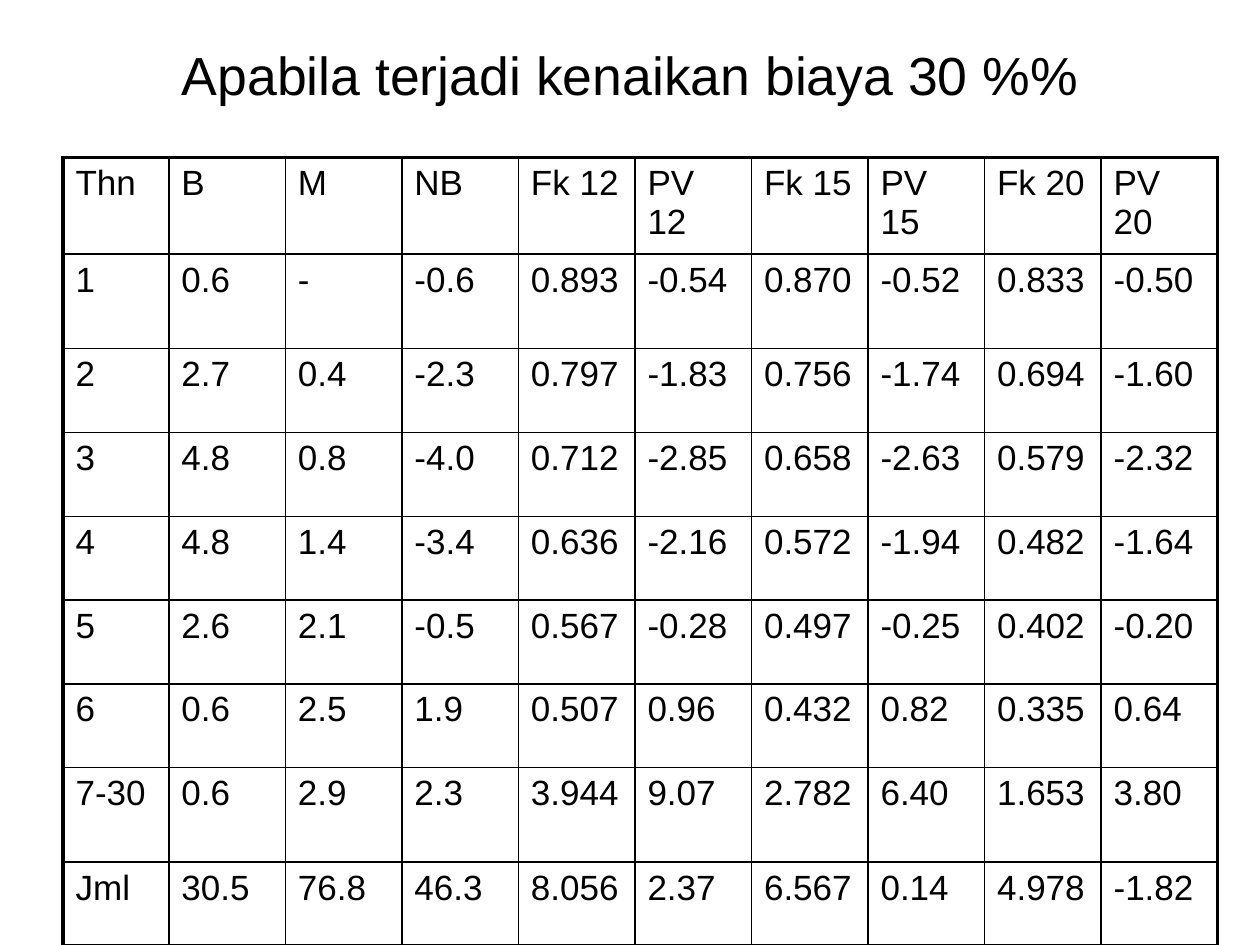
from lxml import etree
from pptx import Presentation
from pptx.dml.color import RGBColor
from pptx.enum import text
from pptx.oxml.ns import qn
from pptx.util import Inches, Pt

BLACK = RGBColor(0, 0, 0)
WHITE = RGBColor(255, 255, 255)
THIN, THICK = Pt(1), Pt(2.25)

ROWS = [
    ["Thn", "B", "M", "NB", "Fk 12", "PV 12", "Fk 15", "PV 15", "Fk 20", "PV 20"],
    ["1", "0.6", "-", "-0.6", "0.893", "-0.54", "0.870", "-0.52", "0.833", "-0.50"],
    ["2", "2.7", "0.4", "-2.3", "0.797", "-1.83", "0.756", "-1.74", "0.694", "-1.60"],
    ["3", "4.8", "0.8", "-4.0", "0.712", "-2.85", "0.658", "-2.63", "0.579", "-2.32"],
    ["4", "4.8", "1.4", "-3.4", "0.636", "-2.16", "0.572", "-1.94", "0.482", "-1.64"],
    ["5", "2.6", "2.1", "-0.5", "0.567", "-0.28", "0.497", "-0.25", "0.402", "-0.20"],
    ["6", "0.6", "2.5", "1.9", "0.507", "0.96", "0.432", "0.82", "0.335", "0.64"],
    ["7-30", "0.6", "2.9", "2.3", "3.944", "9.07", "2.782", "6.40", "1.653", "3.80"],
    ["Jml", "30.5", "76.8", "46.3", "8.056", "2.37", "6.567", "0.14", "4.978", "-1.82"],
]
COL_WIDTHS = [0.84] + [0.925] * 9
ROW_HEIGHTS = [0.76, 0.75] + [0.665] * 5 + [0.75, 0.66]


def write(tf, words, size):
    p = tf.paragraphs[0]
    r = p.add_run()
    r.text = words
    for name, value in {"name": "Arial", "size": Pt(size)}.items():
        setattr(r.font, name, value)
    r.font.color.rgb = BLACK
    return p


def set_borders(cell, widths):
    """Draw left, right, top and bottom lines; they must precede the cell fill."""
    tc_pr = cell._tc.get_or_add_tcPr()
    for i, (side, width) in enumerate(zip(("lnL", "lnR", "lnT", "lnB"), widths)):
        ln = etree.Element(qn(f"a:{side}"), w=str(width))
        fill = etree.SubElement(ln, qn("a:solidFill"))
        etree.SubElement(fill, qn("a:srgbClr"), val=str(BLACK))
        tc_pr.insert(i, ln)


prs = Presentation()
prs.slide_width, prs.slide_height = Inches(10), Inches(7.5)
s = prs.slides.add_slide(prs.slide_layouts[6])
s.background.fill.solid()
s.background.fill.fore_color.rgb = WHITE

title = s.shapes.add_textbox(Inches(0.75), Inches(0.33), Inches(8.5), Inches(0.92))
tf = title.text_frame
for name, value in {"word_wrap": True, "margin_top": 0,
                    "vertical_anchor": text.MSO_ANCHOR.TOP}.items():
    setattr(tf, name, value)
write(tf, "Apabila terjadi kenaikan biaya 30 %%", 30.6).alignment = text.PP_ALIGN.CENTER

table = s.shapes.add_table(len(ROWS), len(COL_WIDTHS), Inches(0.5), Inches(1.25),
                           Inches(sum(COL_WIDTHS)), Inches(sum(ROW_HEIGHTS))).table
table.first_row = table.horz_banding = False
for col, width in zip(table.columns, COL_WIDTHS):
    col.width = Inches(width)
for row, height in zip(table.rows, ROW_HEIGHTS):
    row.height = Inches(height)

last_row, last_col = len(ROWS) - 1, len(COL_WIDTHS) - 1
for i, values in enumerate(ROWS):
    for j, value in enumerate(values):
        cell = table.cell(i, j)
        cell.fill.background()
        write(cell.text_frame, value, 20)
        outer = (j == 0, j == last_col, i == 0, i == last_row)
        set_borders(cell, [THICK if edge else THIN for edge in outer])

prs.save("out.pptx")
